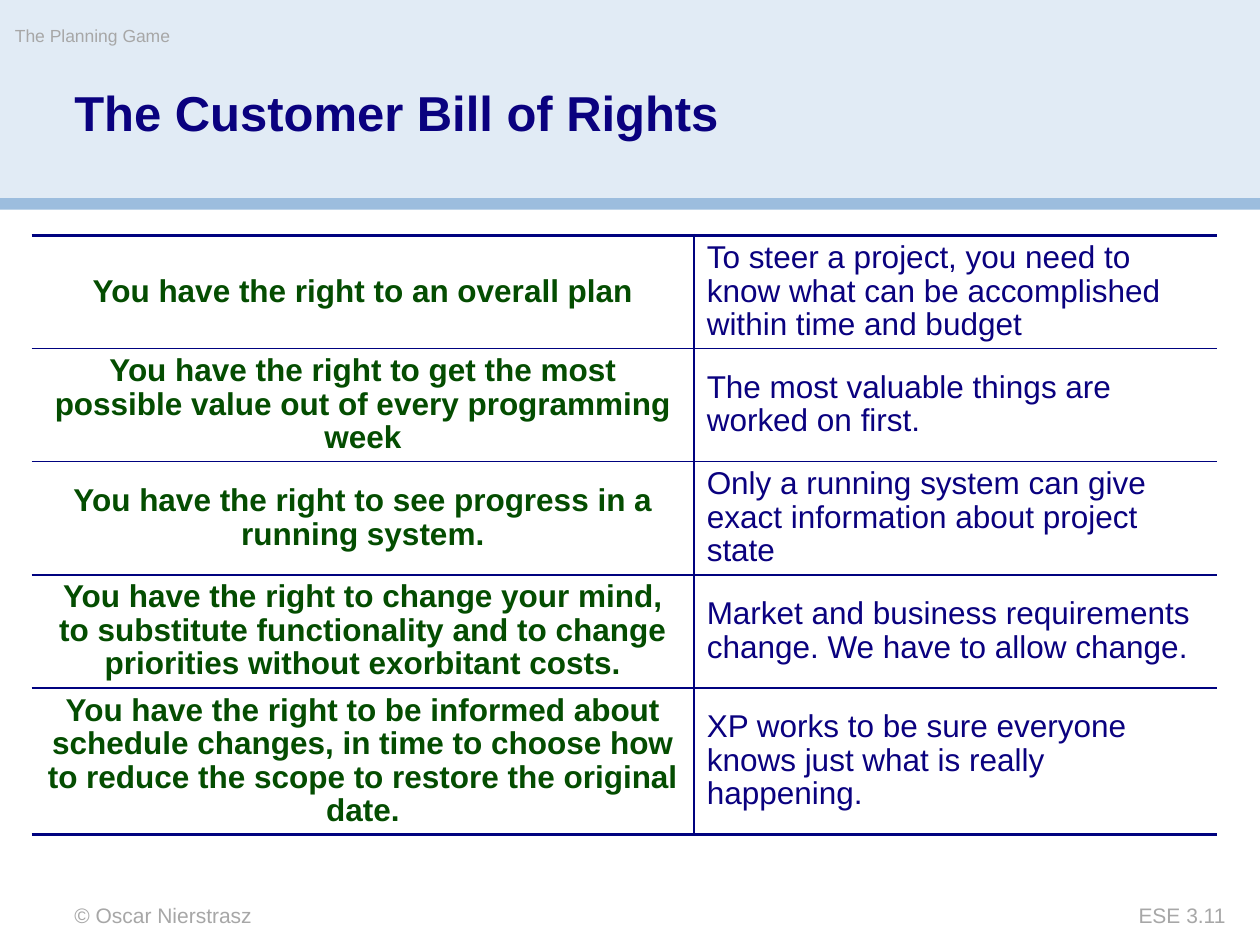
import pptx
import pptx.dml.color
import pptx.enum.shapes
import pptx.enum.text
import pptx.oxml
import pptx.oxml.ns
import pptx.util

Pt = pptx.util.Pt
Align = pptx.enum.text.PP_ALIGN
Anchor = pptx.enum.text.MSO_ANCHOR

NAVY = "0A017F"
GREEN = "044D01"
GREY = "A7A7A7"
RULE = "00027F"

RIGHTS = [
    ("You have the right to an overall plan",
     "To steer a project, you need to know what can be accomplished within time and budget"),
    ("You have the right to get the most possible value out of every programming week",
     "The most valuable things are worked on first."),
    ("You have the right to see progress in a running system.",
     "Only a running system can give exact information about project state"),
    ("You have the right to change your mind, to substitute functionality and to change "
     "priorities without exorbitant costs.",
     "Market and business requirements change. We have to allow change."),
    ("You have the right to be informed about schedule changes, in time to choose how to "
     "reduce the scope to restore the original date.",
     "XP works to be sure everyone knows just what is really happening."),
]


def color(hex_code):
    return pptx.dml.color.RGBColor.from_string(hex_code)


def write(frame, text, size=18, ink=GREY, bold=False, align=Align.LEFT, spacing=None):
    para = frame.paragraphs[0]
    para.alignment = align
    para.line_spacing = spacing
    span = para.add_run()
    span.text = text
    span.font.name = "Arial"
    span.font.size = Pt(size)
    span.font.bold = bold
    span.font.color.rgb = color(ink)


def clear_insets(frame, wrap=True):
    frame.margin_left = frame.margin_right = 0
    frame.margin_top = frame.margin_bottom = 0
    frame.vertical_anchor = Anchor.TOP
    frame.auto_size = pptx.enum.text.MSO_AUTO_SIZE.NONE
    frame.word_wrap = wrap


def add_band(page, top, height, fill):
    band = page.shapes.add_shape(
        pptx.enum.shapes.MSO_SHAPE.RECTANGLE, 0, Pt(top), Pt(720), Pt(height))
    band.shadow.inherit = False
    band.fill.solid()
    band.fill.fore_color.rgb = color(fill)
    band.line.fill.background()


def add_label(page, text, left, top, width, height, wrap=True, **text_format):
    box = page.shapes.add_textbox(Pt(left), Pt(top), Pt(width), Pt(height))
    clear_insets(box.text_frame, wrap)
    write(box.text_frame, text, **text_format)


def set_title(page, text):
    title = page.shapes.title
    title.left, title.top = Pt(42.5), Pt(51)
    title.width, title.height = Pt(521.3), Pt(64)
    clear_insets(title.text_frame)
    write(title.text_frame, text, size=28, ink=NAVY, bold=True, spacing=0.9)


def set_border(cell, side, width):
    namespace = pptx.oxml.ns.nsdecls("a")
    if width:
        paint = f'<a:solidFill><a:srgbClr val="{RULE}"/></a:solidFill>'
    else:
        paint = "<a:noFill/>"
    line = f'<a:ln{side} {namespace} w="{int(Pt(width))}">{paint}</a:ln{side}>'
    cell._tc.get_or_add_tcPr().append(pptx.oxml.parse_xml(line))


def add_rights_table(page):
    widths = [378.7, 298.8]
    heights = [64.5] * 4 + [83.5]
    table = page.shapes.add_table(
        len(RIGHTS), 2, Pt(18), Pt(134.6), Pt(sum(widths)), Pt(sum(heights))).table
    table.first_row = False
    table.horz_banding = False
    for column, width in zip(table.columns, widths):
        column.width = Pt(width)
    styles = [
        {"ink": GREEN, "bold": True, "align": Align.CENTER},
        {"ink": NAVY},
    ]
    last = len(RIGHTS) - 1
    for row, texts in enumerate(RIGHTS):
        table.rows[row].height = Pt(heights[row])
        for column, text in enumerate(texts):
            cell = table.cell(row, column)
            cell.vertical_anchor = Anchor.MIDDLE
            write(cell.text_frame, text, spacing=0.95, **styles[column])
            set_border(cell, "L", 1 if column == 1 else 0)
            set_border(cell, "R", 1 if column == 0 else 0)
            set_border(cell, "T", 2.25 if row == 0 else 1)
            set_border(cell, "B", 2.25 if row == last else 1)
            cell.fill.background()


def main():
    deck = pptx.Presentation()
    deck.slide_width, deck.slide_height = Pt(720), Pt(540)
    page = deck.slides.add_slide(deck.slide_layouts.get_by_name("Title Only"))
    add_band(page, 0, 113.5, "E1EBF5")
    add_band(page, 113.2, 6.6, "9CBDDE")
    title_element = page.shapes.title._element
    page.shapes._spTree.append(title_element)
    set_title(page, "The Customer Bill of Rights")
    add_label(page, "The Planning Game", 8.5, 14.4, 425, 20, wrap=False, size=10)
    add_label(page, "© Oscar Nierstrasz", 42.5, 515.8, 300, 14.4, size=12)
    add_label(page, "ESE 3.11", 594, 515.8, 106.4, 14.4, size=12, align=Align.RIGHT)
    add_rights_table(page)
    deck.save("out.pptx")


if __name__ == "__main__":
    main()
